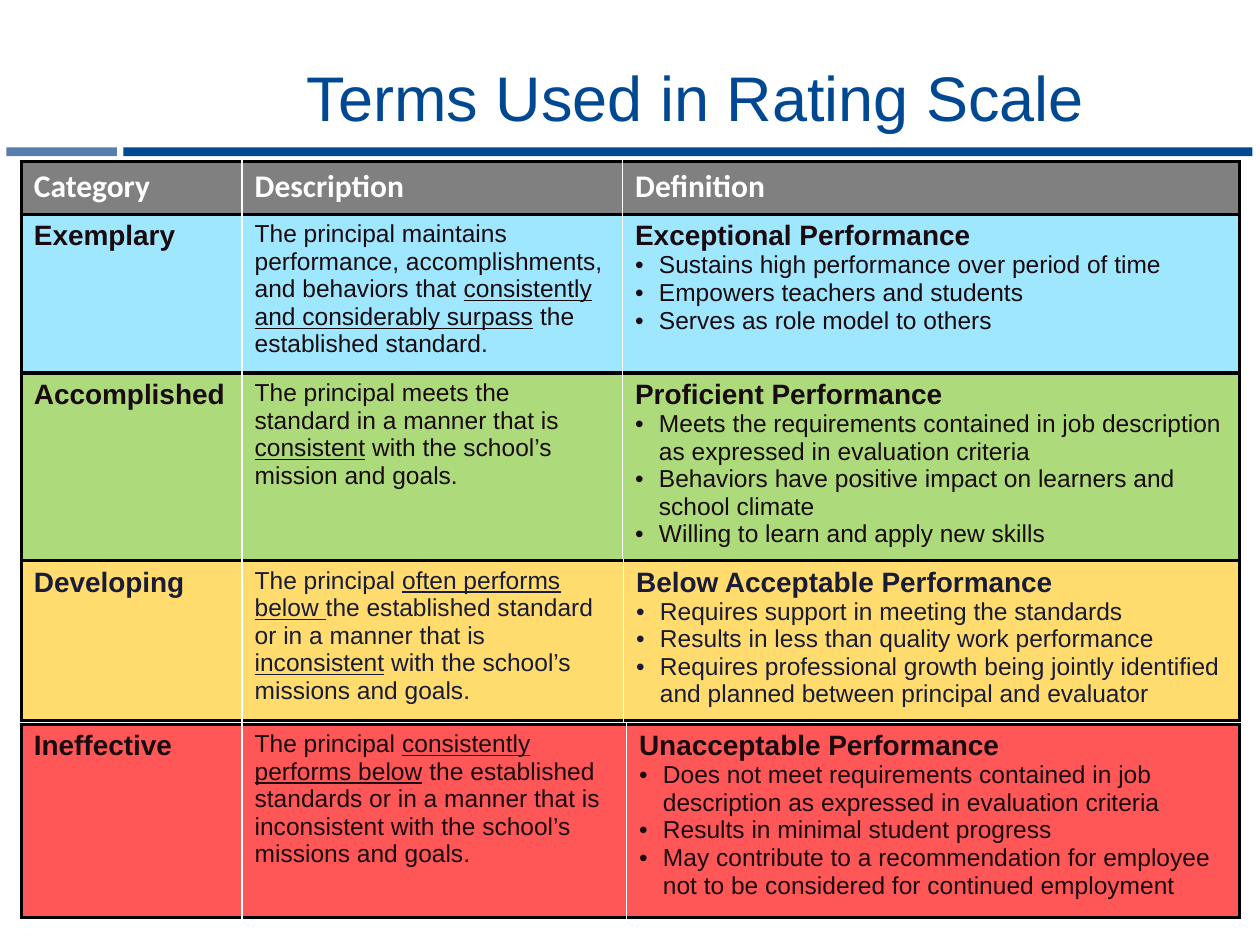
from dataclasses import dataclass

from lxml.etree import SubElement
from pptx import Presentation
from pptx.dml.color import RGBColor
from pptx.enum.shapes import MSO_SHAPE as Preset
from pptx.enum.text import MSO_ANCHOR as Anchor, MSO_AUTO_SIZE as AutoSize, PP_ALIGN as Align
from pptx.oxml.ns import qn
from pptx.util import Cm, Pt

BLACK = RGBColor(0x00, 0x00, 0x00)
WHITE = RGBColor(0xFF, 0xFF, 0xFF)
NAVY = RGBColor(0x00, 0x49, 0x92)
STEEL = RGBColor(0x56, 0x7E, 0xAE)
GRAY = RGBColor(0x80, 0x80, 0x80)
SKY = RGBColor(0x9F, 0xE6, 0xFF)
GREEN = RGBColor(0xAD, 0xDB, 0x7B)
YELLOW = RGBColor(0xFF, 0xDC, 0x6D)
RED = RGBColor(0xFF, 0x57, 0x57)
DARK = RGBColor(0x19, 0x0B, 0x0F)
DARK_BLUE = RGBColor(0x19, 0x1B, 0x37)

TABLE_LEFT, TABLE_WIDTH = 0.43, 24.56
CATEGORY_WIDTH = 4.45
BULLET_INDENT = Cm(0.48)
UNDERLINE_MARK = "_"


@dataclass
class Bar:
    left: float
    width: float
    color: RGBColor


@dataclass
class Rating:
    top: float
    height: float
    fill: RGBColor
    category: str
    description: str
    heading: str
    bullets: tuple[str, ...]
    color: RGBColor = DARK
    description_width: float = 7.67


BARS = (Bar(0.13, 2.23, STEEL), Bar(2.49, 22.76, NAVY))

RATINGS = (
    Rating(4.32, 3.3, SKY, "Exemplary",
           "The principal maintains performance, accomplishments, and behaviors that "
           "_consistently and considerably surpass_ the established standard.",
           "Exceptional Performance",
           ("Sustains high performance over period of time",
            "Empowers teachers and students",
            "Serves as role model to others")),
    Rating(7.52, 3.89, GREEN, "Accomplished",
           "The principal meets the standard in a manner that is _consistent_ "
           "with the school’s mission and goals.",
           "Proficient Performance",
           ("Meets the requirements contained in job description as expressed in evaluation criteria",
            "Behaviors have positive impact on learners and school climate",
            "Willing to learn and apply new skills")),
    Rating(11.3, 3.23, YELLOW, "Developing",
           "The principal _often performs below _the established standard or in a manner "
           "that is _inconsistent_ with the school’s missions and goals.",
           "Below Acceptable Performance",
           ("Requires support in meeting the standards",
            "Results in less than quality work performance",
            "Requires professional growth being jointly identified and planned "
            "between principal and evaluator"),
           color=DARK_BLUE, description_width=7.69),
    Rating(14.6, 3.89, RED, "Ineffective",
           "The principal _consistently performs below_ the established standards or in a "
           "manner that is inconsistent with the school’s missions and goals.",
           "Unacceptable Performance",
           ("Does not meet requirements contained in job description as expressed "
            "in evaluation criteria",
            "Results in minimal student progress",
            "May contribute to a recommendation for employee not to be considered "
            "for continued employment"),
           description_width=7.75),
)


def write(paragraph, text: str, *, size: float, color: RGBColor, font: str = "Arial",
          bold: bool = False, bullet: bool = False, align: Align = Align.LEFT) -> None:
    paragraph.alignment = align
    if bullet:
        properties = paragraph._p.get_or_add_pPr()
        properties.set("marL", str(BULLET_INDENT))
        properties.set("indent", str(-BULLET_INDENT))
        SubElement(properties, qn("a:buFont")).set("typeface", "Arial")
        SubElement(properties, qn("a:buChar")).set("char", "•")
    for index, part in enumerate(text.split(UNDERLINE_MARK)):
        run = paragraph.add_run()
        run.text = part
        run.font.name = font
        run.font.size = Pt(size)
        run.font.bold = bold
        run.font.underline = index % 2 == 1
        run.font.color.rgb = color


def set_border(cell, side: str, color: RGBColor, width: float) -> None:
    line = SubElement(cell._tc.get_or_add_tcPr(), qn(f"a:ln{side}"), w=str(Pt(width)))
    SubElement(SubElement(line, qn("a:solidFill")), qn("a:srgbClr")).set("val", str(color))


def add_row_table(slide, top: float, height: float, description_width: float, fill: RGBColor):
    widths = (CATEGORY_WIDTH, description_width,
              TABLE_WIDTH - CATEGORY_WIDTH - description_width)
    table = slide.shapes.add_table(1, len(widths), Cm(TABLE_LEFT), Cm(top),
                                   Cm(TABLE_WIDTH), Cm(height)).table
    table.first_row = table.horz_banding = False
    last = len(widths) - 1
    for index, width in enumerate(widths):
        table.columns[index].width = Cm(width)
        cell = table.cell(0, index)
        outer, inner = (BLACK, 2.25), (WHITE, 1)
        set_border(cell, "L", *(outer if index == 0 else inner))
        set_border(cell, "R", *(outer if index == last else inner))
        set_border(cell, "T", *outer)
        set_border(cell, "B", *outer)
        cell.fill.solid()
        cell.fill.fore_color.rgb = fill
    return table


def add_header(slide) -> None:
    table = add_row_table(slide, 3.25, 1.07, 7.67, GRAY)
    for index, label in enumerate(("Category", "Description", "Definition")):
        write(table.cell(0, index).text_frame.paragraphs[0], label,
              size=18, color=WHITE, font="Calibri", bold=True)


def add_rating(slide, rating: Rating) -> None:
    table = add_row_table(slide, rating.top, rating.height, rating.description_width, rating.fill)
    category, description, definition = (table.cell(0, index).text_frame for index in range(3))
    write(category.paragraphs[0], rating.category, size=16, color=rating.color, bold=True)
    write(description.paragraphs[0], rating.description, size=14, color=rating.color)
    write(definition.paragraphs[0], rating.heading, size=16, color=rating.color, bold=True)
    for text in rating.bullets:
        write(definition.add_paragraph(), text, size=14, color=rating.color, bullet=True)


def add_bar(slide, bar: Bar) -> None:
    shape = slide.shapes.add_shape(Preset.RECTANGLE, Cm(bar.left), Cm(2.97),
                                   Cm(bar.width), Cm(0.18))
    shape.shadow.inherit = False
    shape.fill.solid()
    shape.fill.fore_color.rgb = bar.color
    shape.line.fill.background()


def add_title(slide, text: str) -> None:
    title = slide.shapes.title
    title.left, title.top, title.width, title.height = Cm(2.64), Cm(1.04), Cm(22.76), Cm(1.8)
    title.text_frame.auto_size = AutoSize.NONE
    title.text_frame.vertical_anchor = Anchor.MIDDLE
    write(title.text_frame.paragraphs[0], text, size=36, color=NAVY, align=Align.CENTER)


def main() -> None:
    presentation = Presentation()
    presentation.slide_width, presentation.slide_height = Cm(25.4), Cm(19.05)
    slide = presentation.slides.add_slide(presentation.slide_layouts[5])
    for bar in BARS:
        add_bar(slide, bar)
    add_title(slide, "Terms Used in Rating Scale")
    add_header(slide)
    for rating in RATINGS:
        add_rating(slide, rating)
    presentation.save("out.pptx")


if __name__ == "__main__":
    main()
